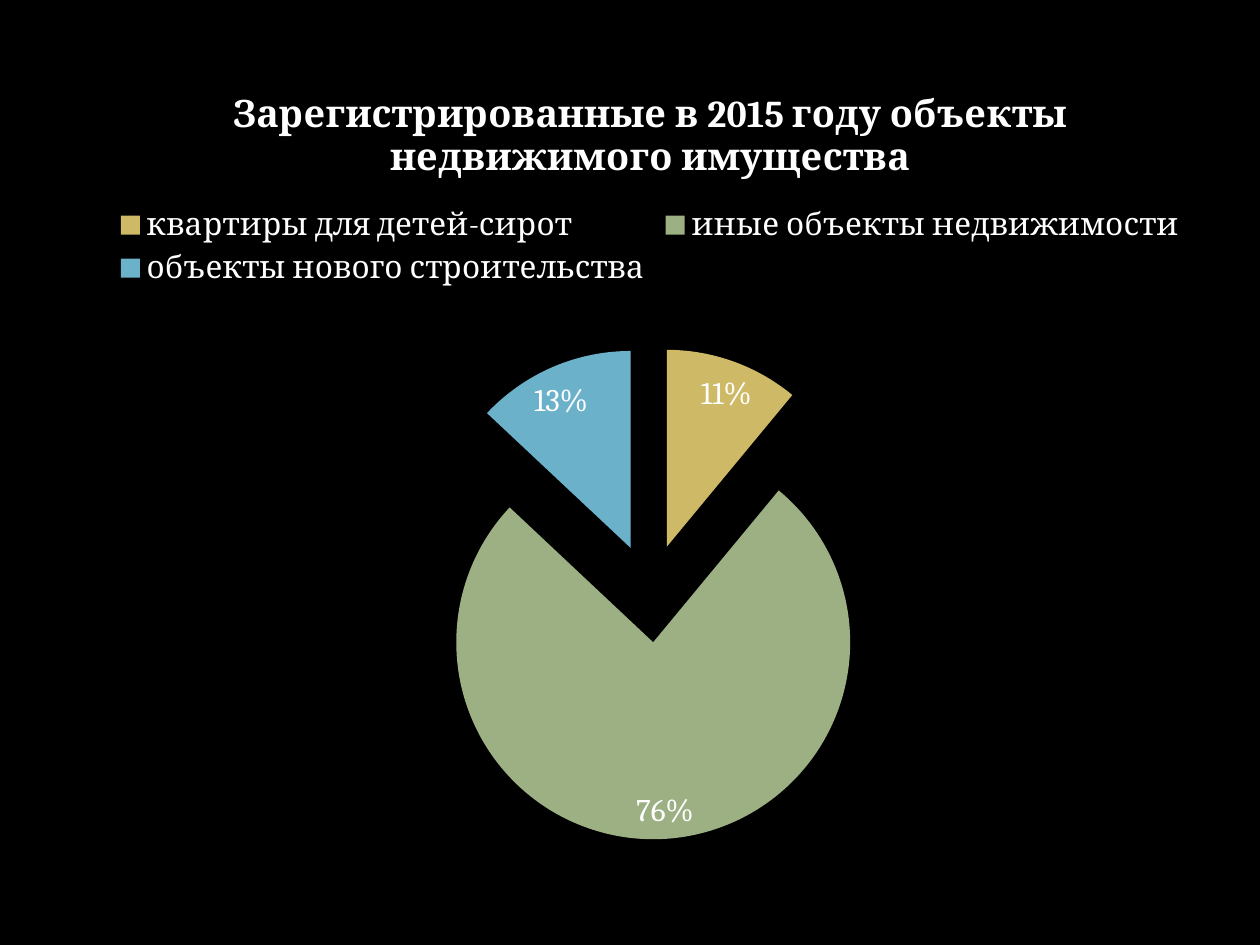
from lxml.etree import Element
from pptx import Presentation
from pptx.chart.data import CategoryChartData
from pptx.dml.color import RGBColor
from pptx.enum.chart import (XL_CHART_TYPE as ChartType, XL_LABEL_POSITION as LabelPos,
                             XL_LEGEND_POSITION as LegendPos)
from pptx.oxml.ns import qn
from pptx.util import Inches, Pt

FONT = "Cambria"
COLORS = {"background": "000000", "text": "FFFFFF"}
HEADING = "Зарегистрированные в 2015 году объекты недвижимого имущества"
# category: (percent, slice colour)
PROPERTY_SHARES = {
    "квартиры для детей-сирот": (11, "CEB966"),
    "иные объекты недвижимости": (76, "9CB084"),
    "объекты нового строительства": (13, "6BB1C9"),
}
EXPLOSION = 25


def rgb(name):
    return RGBColor.from_string(COLORS[name])


def style_font(font, size, bold=False):
    font.name, font.size, font.bold = FONT, Pt(size), bold
    font.color.rgb = rgb("text")


def explode(series, percent):
    """Pull every slice out from the centre by a share of the radius."""
    explosion = Element(qn("c:explosion"), val=str(percent))
    series._element.find(qn("c:tx")).addnext(explosion)


def add_shares_pie(slide, left, top, width, height):
    shares = CategoryChartData()
    shares.categories = list(PROPERTY_SHARES)
    shares.add_series(HEADING, [percent for percent, _ in PROPERTY_SHARES.values()])
    pie = slide.shapes.add_chart(ChartType.PIE, left, top, width, height, shares).chart
    style_font(pie.font, 18)

    pie.has_title = True
    heading = pie.chart_title.text_frame.paragraphs[0].add_run()
    heading.text = HEADING
    style_font(heading.font, 21.6, bold=True)
    pie.chart_title.include_in_layout = False

    pie.has_legend = True
    pie.legend.position = LegendPos.TOP
    pie.legend.include_in_layout = False
    style_font(pie.legend.font, 18)

    plot = pie.plots[0]
    plot.vary_by_categories = True
    series = plot.series[0]
    explode(series, EXPLOSION)
    for index, (_, color) in enumerate(PROPERTY_SHARES.values()):
        fill = series.points[index].format.fill
        fill.solid()
        fill.fore_color.rgb = RGBColor.from_string(color)

    labels = series.data_labels
    labels.show_percentage = True
    labels.show_value = False
    labels.number_format, labels.number_format_is_linked = "0%", False
    labels.position = LabelPos.BEST_FIT
    style_font(labels.font, 18)


def main():
    deck = Presentation()
    deck.slide_width, deck.slide_height = Inches(10), Inches(7.5)
    slide = deck.slides.add_slide(deck.slide_layouts[6])
    background = slide.background.fill
    background.solid()
    background.fore_color.rgb = rgb("background")
    add_shares_pie(slide, Inches(0.55), Inches(0.47), Inches(9.22), Inches(6.33))
    deck.save("out.pptx")


if __name__ == "__main__":
    main()
